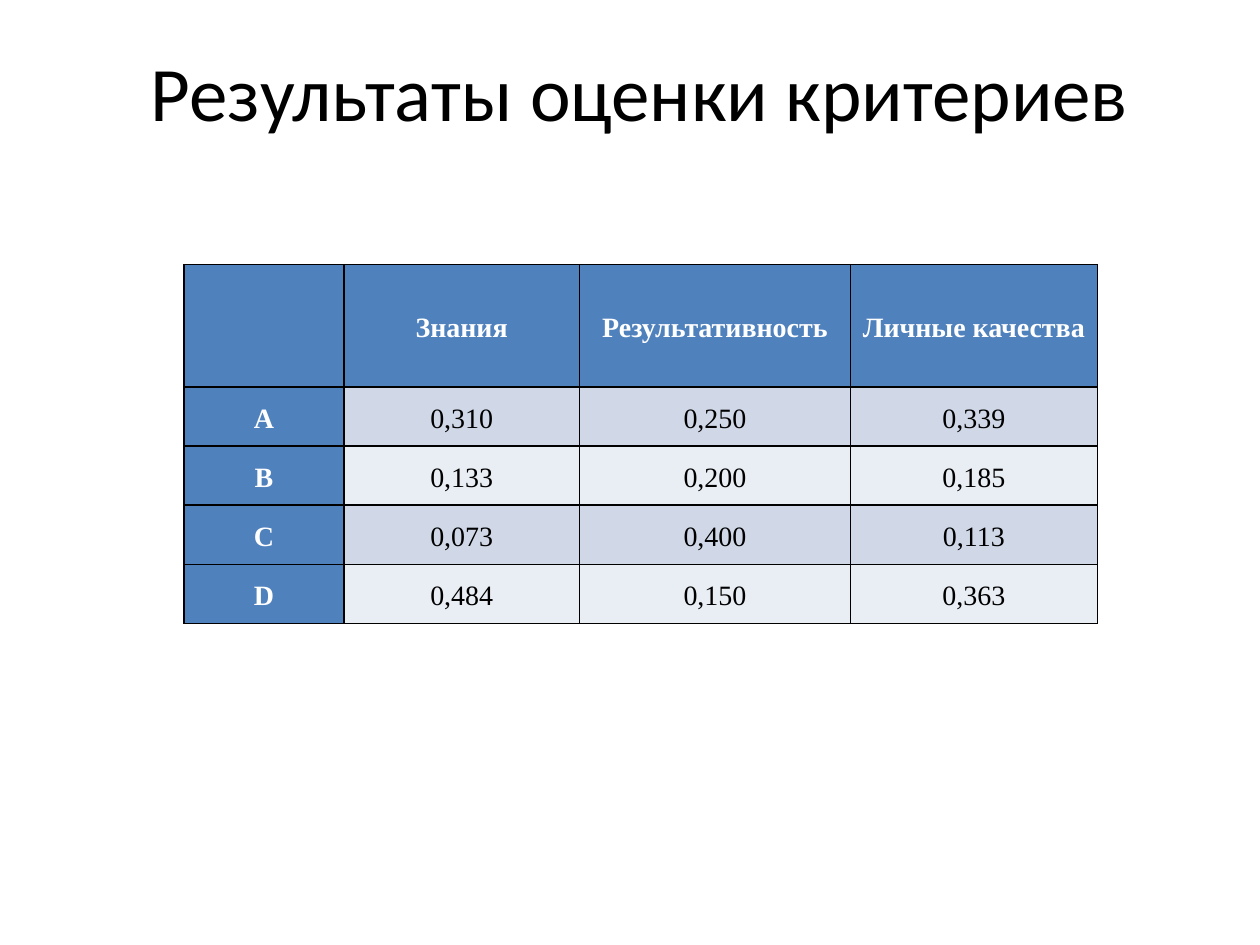
"""Build a slide with a title and a table of criteria scores."""
import pptx
import pptx.dml.color
import pptx.enum.text
import pptx.oxml
import pptx.oxml.ns
import pptx.util

Inches = pptx.util.Inches
Pt = pptx.util.Pt

COLORS = {
    "header": "4F81BD",
    "odd_row": "D0D8E8",
    "even_row": "E9EDF4",
    "light": "FFFFFF",
    "dark": "000000",
}
SCORES = [
    ["", "Знания", "Результативность", "Личные качества"],
    ["A", "0,310", "0,250", "0,339"],
    ["B", "0,133", "0,200", "0,185"],
    ["C", "0,073", "0,400", "0,113"],
    ["D", "0,484", "0,150", "0,363"],
]
COLUMN_WIDTHS = [1.27, 1.87, 2.15, 1.96]
ROW_HEIGHTS = [0.97] + [0.47] * 4


def rgb(name):
    return pptx.dml.color.RGBColor.from_string(COLORS[name])


def write_text(frame, text, *, font, size, color="dark", bold=False, spacing=1.0):
    paragraph = frame.paragraphs[0]
    paragraph.alignment = pptx.enum.text.PP_ALIGN.CENTER
    paragraph.line_spacing = spacing
    run = paragraph.add_run()
    run.text = text
    run.font.name = font
    run.font.size = Pt(size)
    run.font.bold = bold
    run.font.color.rgb = rgb(color)


def add_title(slide, text):
    title = slide.shapes.add_textbox(Inches(0.83), Inches(0.13), Inches(8.5), Inches(1.18))
    frame = title.text_frame
    frame.word_wrap = True
    frame.vertical_anchor = pptx.enum.text.MSO_ANCHOR.MIDDLE
    write_text(frame, text, font="Calibri", size=44)


def set_borders(cell, width=1):
    properties = cell._tc.get_or_add_tcPr()
    for position, side in enumerate(("lnL", "lnR", "lnT", "lnB")):
        border = pptx.oxml.parse_xml(
            f'<a:{side} {pptx.oxml.ns.nsdecls("a")} w="{Pt(width)}"><a:solidFill>'
            f'<a:srgbClr val="{COLORS["dark"]}"/></a:solidFill></a:{side}>'
        )
        properties.insert(position, border)


def format_cell(cell, text, fill, is_heading):
    cell.fill.solid()
    cell.fill.fore_color.rgb = rgb(fill)
    cell.vertical_anchor = pptx.enum.text.MSO_ANCHOR.MIDDLE
    cell.margin_left = cell.margin_right = Inches(0.07)
    cell.margin_top = cell.margin_bottom = 0
    set_borders(cell)
    if text:
        write_text(
            cell.text_frame, text, font="Times New Roman", size=16,
            color="light" if is_heading else "dark", bold=is_heading, spacing=1.15,
        )


def add_score_table(slide):
    table = slide.shapes.add_table(
        len(ROW_HEIGHTS), len(COLUMN_WIDTHS), Inches(1.46), Inches(2.1),
        Inches(sum(COLUMN_WIDTHS)), Inches(sum(ROW_HEIGHTS)),
    ).table
    for column, width in zip(table.columns, COLUMN_WIDTHS):
        column.width = Inches(width)
    for row, height in zip(table.rows, ROW_HEIGHTS):
        row.height = Inches(height)
    for row_index, scores in enumerate(SCORES):
        band = "odd_row" if row_index % 2 else "even_row"
        for column_index, text in enumerate(scores):
            is_heading = row_index == 0 or column_index == 0
            fill = "header" if is_heading else band
            format_cell(table.cell(row_index, column_index), text, fill, is_heading)


def main():
    presentation = pptx.Presentation()
    presentation.slide_width = Inches(10)
    presentation.slide_height = Inches(7.5)
    slide = presentation.slides.add_slide(presentation.slide_layouts[6])
    add_title(slide, "Результаты оценки критериев")
    add_score_table(slide)
    presentation.save("out.pptx")


if __name__ == "__main__":
    main()
